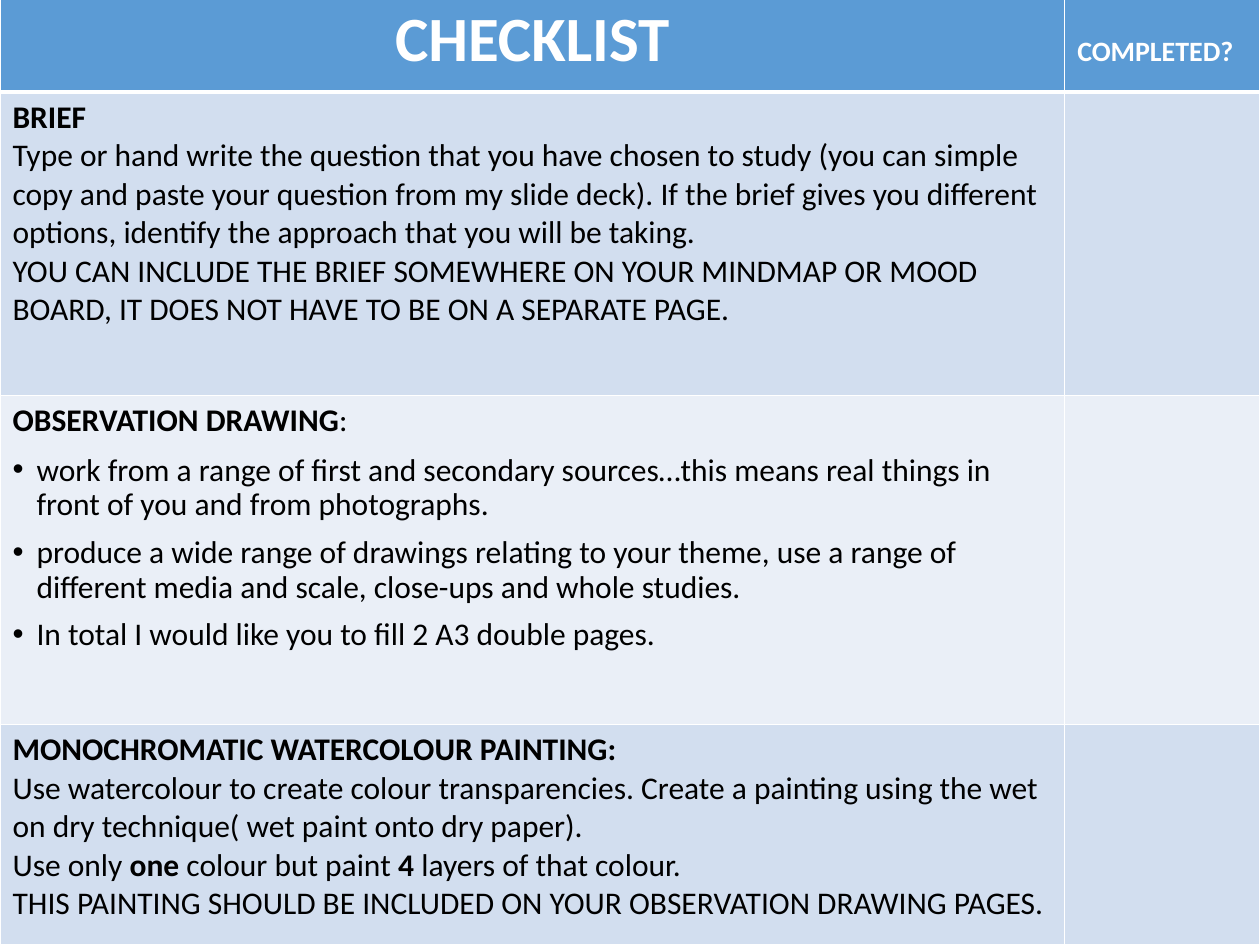
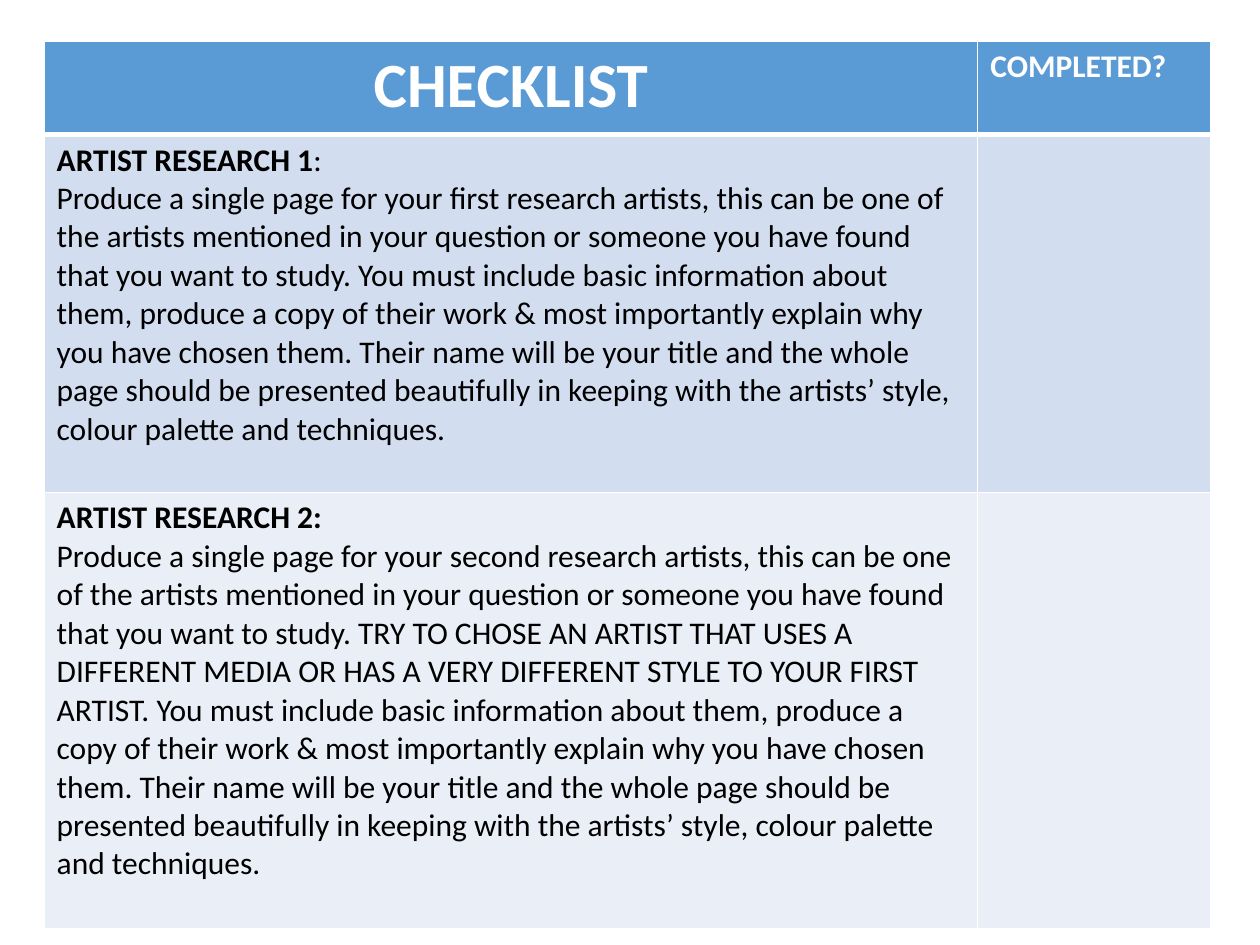
from lxml.etree import SubElement
from pptx import Presentation
from pptx.dml.color import RGBColor
from pptx.enum.text import PP_ALIGN
from pptx.oxml.ns import qn
from pptx.util import Inches, Pt

FONT = "Calibri"
WHITE = RGBColor(0xFF, 0xFF, 0xFF)
BLACK = RGBColor(0x00, 0x00, 0x00)
HEADER_BLUE = RGBColor(0x5B, 0x9B, 0xD5)
BANDS = (RGBColor(0xD2, 0xDE, 0xEF), RGBColor(0xEA, 0xEF, 0xF7))

ARTIST_ADVICE = (
    "You must include basic information about them, produce a copy of their work & most "
    "importantly explain why you have chosen them. Their name will be your title and the whole "
    "page should be presented beautifully in keeping with the artists’ style, colour palette "
    "and techniques."
)
ARTIST_CHOICE = (
    "research artists, this can be one of the artists mentioned in your question or someone "
    "you have found that you want to study."
)

BRIEF = [
    [("BRIEF", True)],
    [("Type or hand write the question that you have chosen to study (you can simple copy and "
      "paste your question from my slide deck). If the brief gives you different options, "
      "identify the approach that you will be taking.", False)],
    [("YOU CAN INCLUDE THE BRIEF SOMEWHERE ON YOUR MINDMAP OR MOOD BOARD, IT DOES NOT HAVE TO "
      "BE ON A SEPARATE PAGE.", False)],
]
OBSERVATION = [
    [("OBSERVATION DRAWING", True), (":", False)],
    "work from a range of first and secondary sources…this means real things in front of you "
    "and from photographs.",
    "produce a wide range of drawings relating to your theme, use a range of different media "
    "and scale, close-ups and whole studies.",
    "In total I would like you to fill 2 A3 double pages.",
]
WATERCOLOUR = [
    [("MONOCHROMATIC WATERCOLOUR PAINTING:", True)],
    [("Use watercolour to create colour transparencies. Create a painting using the wet on dry "
      "technique( wet paint onto dry paper).", False)],
    [("Use only ", False), ("one", True), (" colour but paint ", False), ("4", True),
     (" layers of that colour.", False)],
    [("THIS PAINTING SHOULD BE INCLUDED ON YOUR OBSERVATION DRAWING PAGES.", False)],
]
ARTIST_1 = [
    [("ARTIST RESEARCH 1", True), (":", False)],
    [(f"Produce a single page for your first {ARTIST_CHOICE} {ARTIST_ADVICE}", False)],
]
ARTIST_2 = [
    [("ARTIST RESEARCH 2:", True)],
    [(f"Produce a single page for your second {ARTIST_CHOICE} TRY TO CHOSE AN ARTIST THAT USES "
      "A DIFFERENT MEDIA OR HAS A VERY DIFFERENT STYLE TO YOUR FIRST ARTIST. "
      f"{ARTIST_ADVICE}", False)],
]


def add_run(paragraph, text, size, color, bold):
    """Append one formatted run to a paragraph."""
    run = paragraph.add_run()
    run.text = text
    run.font.name = FONT
    run.font.size = Pt(size)
    run.font.bold = bold
    run.font.color.rgb = color


def make_bullet(paragraph):
    """Give a paragraph a hanging bullet and its spacing."""
    paragraph.line_spacing = 0.9
    paragraph.space_before = Pt(7.5)
    properties = paragraph._p.get_or_add_pPr()
    properties.set("marL", str(Inches(0.19)))
    properties.set("indent", str(-Inches(0.19)))
    SubElement(properties, qn("a:buFont"), typeface="Arial")
    SubElement(properties, qn("a:buChar"), char="•")


def style_cell(cell, color, top=1, bottom=1):
    """Draw white borders around a cell and fill it."""
    properties = cell._tc.get_or_add_tcPr()
    for side, width in (("L", 1), ("R", 1), ("T", top), ("B", bottom)):
        line = SubElement(properties, qn(f"a:ln{side}"), w=str(Pt(width)))
        line_fill = SubElement(line, qn("a:solidFill"))
        SubElement(line_fill, qn("a:srgbClr"), val=str(WHITE))
    cell.fill.solid()
    cell.fill.fore_color.rgb = color


def fill_header(title_cell, completed_cell, completed_size, completed_top):
    """Write the two headings of the checklist."""
    for cell in (title_cell, completed_cell):
        style_cell(cell, HEADER_BLUE, bottom=3)
    title = title_cell.text_frame.paragraphs[0]
    title.alignment = PP_ALIGN.CENTER
    add_run(title, "CHECKLIST", 36, WHITE, True)
    completed_cell.margin_top = Inches(completed_top)
    add_run(completed_cell.text_frame.paragraphs[0], "COMPLETED?", completed_size, WHITE, True)


def fill_task(cell, task):
    """Write a task, where plain strings become bullets."""
    frame = cell.text_frame
    for index, content in enumerate(task):
        paragraph = frame.add_paragraph() if index else frame.paragraphs[0]
        if isinstance(content, str):
            make_bullet(paragraph)
            content = [(content, False)]
        for text, bold in content:
            add_run(paragraph, text, 18, BLACK, bold)


def add_checklist(prs, left, top, columns, heights, tasks, completed_size, completed_top):
    """Add a slide with one checklist table at the given place."""
    slide = prs.slides.add_slide(prs.slide_layouts[6])
    checklist = slide.shapes.add_table(
        len(heights), len(columns), Inches(left), Inches(top),
        Inches(sum(columns)), Inches(sum(heights))).table
    for column, width in zip(checklist.columns, columns):
        column.width = Inches(width)
    for row, height in zip(checklist.rows, heights):
        row.height = Inches(height)
    fill_header(checklist.cell(0, 0), checklist.cell(0, 1), completed_size, completed_top)
    for number, task in enumerate(tasks, 1):
        for column in range(len(columns)):
            style_cell(checklist.cell(number, column), BANDS[(number - 1) % 2],
                       top=3 if number == 1 else 1)
        fill_task(checklist.cell(number, 0), task)


def main():
    """Build both checklist slides and save them."""
    prs = Presentation()
    prs.slide_width, prs.slide_height = Inches(10), Inches(7.5)
    add_checklist(prs, 0, -0.04, (8.45, 1.55), (0.77, 2.41, 2.61, 1.75),
                  (BRIEF, OBSERVATION, WATERCOLOUR), 16, 0.32)
    add_checklist(prs, 0.35, 0.33, (7.41, 1.85), (0.74, 2.84, 3.46),
                  (ARTIST_1, ARTIST_2), 18, 0.05)
    prs.save("out.pptx")


if __name__ == "__main__":
    main()
